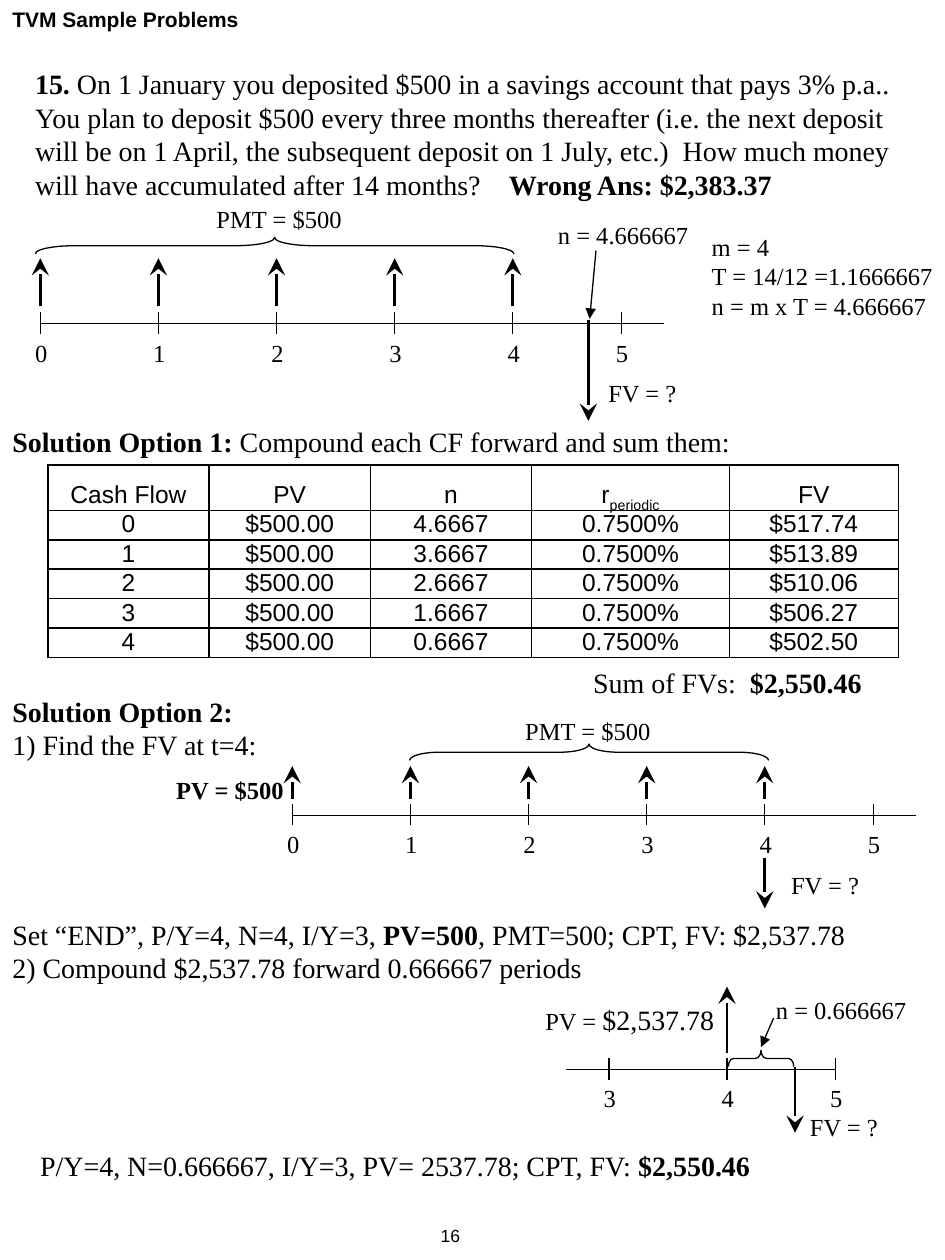
from dataclasses import dataclass

from lxml import etree
from pptx import Presentation
from pptx.dml.color import RGBColor
from pptx.enum import shapes, text
from pptx.oxml import ns
from pptx.util import Inches, Pt


@dataclass(frozen=True)
class Theme:
    ink: RGBColor = RGBColor(0, 0, 0)
    serif: str = "Times New Roman"
    sans: str = "Arial"
    body: int = 16
    label: int = 14
    title: int = 12
    page: int = 10
    thin: float = 0.75
    thick: float = 1.5
    grid: float = 1


THEME = Theme()
PERIOD = 0.9375     # distance between two ticks
LAST_PERIOD = 0.86  # the step from 4 to 5 is shorter


def add_run(paragraph, content, size=THEME.label, font=THEME.serif, bold=False, baseline=None):
    run = paragraph.add_run()
    run.text = content
    run.font.size = Pt(size)
    run.font.name = font
    run.font.bold = bold
    run.font.color.rgb = THEME.ink
    if baseline:
        run.font._element.set("baseline", str(baseline))


def add_child(parent, tag, **attributes):
    return etree.SubElement(parent, ns.qn(tag), {k: str(v) for k, v in attributes.items()})


def tick_x(origin, number):
    return origin + PERIOD * min(number, 4) + LAST_PERIOD * (number == 5)


class Page:
    def __init__(self, slide, theme):
        self.shapes = slide.shapes
        self.theme = theme

    def text(self, left, top, width, height, *lines, wrap=False, fit=True,
             align=None, tab=None, right_inset=0.1, **style):
        """Each line is a string or a list of (string, format) pairs."""
        box = self.shapes.add_textbox(*map(Inches, (left, top, width, height)))
        frame = box.text_frame
        frame.word_wrap = wrap
        frame.margin_right = Inches(right_inset)
        if fit:
            frame.auto_size = text.MSO_AUTO_SIZE.SHAPE_TO_FIT_TEXT
        for index, line in enumerate(lines):
            paragraph = frame.add_paragraph() if index else frame.paragraphs[0]
            paragraph.alignment = align
            if tab:
                stops = add_child(paragraph._p.get_or_add_pPr(), "a:tabLst")
                add_child(stops, "a:tab", pos=Inches(tab), algn="l")
            for content, extra in [(line, {})] if isinstance(line, str) else line:
                add_run(paragraph, content, **{**style, **extra})

    def line(self, x1, y1, x2, y2, weight=THEME.thin, head=None, head_size="med"):
        connector = self.shapes.add_connector(
            shapes.MSO_CONNECTOR.STRAIGHT, *map(Inches, (x1, y1, x2, y2)))
        connector.line.color.rgb = self.theme.ink
        connector.line.width = Pt(weight)
        properties = connector._element.spPr
        if head:
            add_child(properties.find(ns.qn("a:ln")), "a:tailEnd",
                      type=head, w=head_size, len=head_size)
        add_child(properties, "a:effectLst")

    def cash_flow(self, x, start, end):
        self.line(x, start, x, end, self.theme.thick, "stealth", "lg")

    def brace(self, x1, x2, middle, curl):
        depth, span = 0.13, x2 - x1
        brace = self.shapes.add_shape(
            shapes.MSO_SHAPE.RIGHT_BRACE,
            *map(Inches, ((x1 + x2 - depth) / 2, middle - span / 2, depth, span)))
        brace.rotation = 270
        brace.adjustments[0] = curl
        brace.adjustments[1] = 0.5
        brace.shadow.inherit = False
        brace.fill.background()
        brace.line.color.rgb = self.theme.ink
        brace.line.width = Pt(self.theme.thin)

    def timeline(self, origin, axis, start, end, numbers):
        self.line(start, axis, end, axis)
        for number in numbers:
            x = tick_x(origin, number)
            self.line(x, axis - 0.09, x, axis + 0.08)
            self.text(x - 0.14, axis + 0.06, 0.3, 0.33, str(number))

    def table(self, left, top, widths, heights, rows):
        table = self.shapes.add_table(
            len(heights), len(widths),
            *map(Inches, (left, top, sum(widths), sum(heights)))).table
        table.first_row = table.horz_banding = False
        for column, width in zip(table.columns, widths):
            column.width = Inches(width)
        for row, height in zip(table.rows, heights):
            row.height = Inches(height)
        for r in range(len(heights)):
            for c in range(len(widths)):
                filled = r < len(rows)
                self.cell(table.cell(r, c), rows[r][c] if filled else "",
                          "LRTB" if filled else "T")

    def cell(self, cell, content, edges):
        cell.vertical_anchor = text.MSO_ANCHOR.BOTTOM
        for edge in "LRTB":
            border = add_child(cell._tc.get_or_add_tcPr(), f"a:ln{edge}", w=Pt(self.theme.grid))
            if edge in edges:
                color = add_child(border, "a:solidFill")
                add_child(color, "a:srgbClr", val=self.theme.ink)
            else:
                add_child(border, "a:noFill")
        cell.fill.background()
        if content:
            paragraph = cell.text_frame.paragraphs[0]
            paragraph.alignment = text.PP_ALIGN.CENTER
            paragraph.line_spacing = 0.1
            main, _, subscript = content.partition("_")
            add_run(paragraph, main, font=self.theme.sans)
            if subscript:
                add_run(paragraph, subscript, font=self.theme.sans, baseline=-30000)


def main():
    deck = Presentation()
    deck.slide_width, deck.slide_height = Inches(7.5), Inches(10)
    page = Page(deck.slides.add_slide(deck.slide_layouts[6]), THEME)
    bold, plain, body = {"bold": True}, {}, {"size": THEME.body}

    # Header and page number
    page.text(0, 0, 3.25, 0.25, "TVM Sample Problems", wrap=True, fit=False,
              size=THEME.title, font=THEME.sans, bold=True)
    page.text(3.25, 9.67, 0.5, 0.33, "16", wrap=True, fit=False,
              align=text.PP_ALIGN.RIGHT, size=THEME.page, font=THEME.sans)

    # Problem
    page.text(0.18, 0.48, 7.32, 1.17, [
        ("15.", bold),
        (" On 1 January you deposited $500 in a savings account that pays 3% p.a..  "
         "You plan to deposit $500 every three months thereafter (i.e. the next deposit "
         "will be on 1 April, the subsequent deposit on 1 July, etc.)  How much money "
         "will have accumulated after 14 months?\t", plain),
        ("Wrong Ans: $2,383.37", bold)], wrap=True, tab=3.76, **body)

    # Timeline of the problem
    problem = 0.32
    page.timeline(problem, 2.57, problem, 5.27, range(6))
    for number in range(5):
        page.cash_flow(tick_x(problem, number), 2.43, 2.05)
    page.brace(0.28, 4.08, 1.95, 2.4)
    page.text(1.62, 1.57, 1.2, 0.33, "PMT = $500")
    page.cash_flow(4.67, 2.54, 3.34)
    page.text(4.73, 2.95, 0.74, 0.33, "FV = ?")
    page.text(4.33, 1.7, 1.23, 0.33, "n = 4.666667", right_inset=0.04)
    page.line(4.73, 1.99, 4.68, 2.53, head="triangle")
    page.text(5.55, 1.79, 1.95, 0.8,
              "m = 4", "T = 14/12 =1.1666667", "n = m x T = 4.666667", right_inset=0.04)

    # Option 1: table of compounded cash flows
    page.text(0, 3.32, 5.92, 0.37, [
        ("Solution Option 1:", bold),
        (" Compound each CF forward and sum them:", plain)], **body)
    future_values = ["$517.74", "$513.89", "$510.06", "$506.27", "$502.50"]
    flows = [[str(i), "$500.00", f"{4.6667 - i:.4f}", "0.7500%", value]
             for i, value in enumerate(future_values)]
    header, footer = 0.36, 0.56
    flow_height = (2.09 - header - footer) / len(flows)
    page.table(0.38, 3.69, [1.28, 1.28, 1.28, 1.57, 1.34],
               [header] + [flow_height] * len(flows) + [footer],
               [["Cash Flow", "PV", "n", "r_periodic", "FV"]] + flows)
    page.text(4.61, 5.23, 2.34, 0.37,
              [("Sum of FVs:  ", plain), ("$2,550.46", bold)], **body)

    # Option 2, step 1: value at t=4
    page.text(0, 5.46, 2.21, 0.64,
              [("Solution Option 2:", bold)], "1) Find the FV at t=4:", **body)
    step_one = 2.32
    page.timeline(step_one, 6.47, step_one, 7.27, range(6))
    for number in range(5):
        page.cash_flow(tick_x(step_one, number), 6.34, 6.08)
    page.brace(3.25, 6.1, 5.97, 1.8)
    page.text(4.07, 5.63, 1.2, 0.33, "PMT = $500")
    page.text(1.3, 6.1, 1.06, 0.33, "PV = $500", bold=True)
    page.cash_flow(tick_x(step_one, 4), 6.81, 7.21)
    page.text(6.18, 6.86, 0.74, 0.33, "FV = ?")
    page.text(0, 7.23, 6.86, 0.64, [
        ("Set “END”, P/Y=4, N=4, I/Y=3, ", plain), ("PV=500", bold),
        (", PMT=500; CPT, FV: $2,537.78", plain)],
        "2) Compound $2,537.78 forward 0.666667 periods", **body)

    # Option 2, step 2: forward from t=4
    step_two = 2.02
    page.timeline(step_two, 8.49, 4.49, 6.63, range(3, 6))
    page.cash_flow(tick_x(step_two, 4), 8.36, 7.83)
    page.text(4.23, 7.91, 1.55, 0.37, [("PV = ", plain), ("$2,537.78", body)])
    page.brace(5.78, 6.3, 8.4, 0.33)
    page.text(6.06, 7.85, 1.23, 0.33, "n = 0.666667", right_inset=0.04)
    page.line(6.14, 8.08, 6.04, 8.31, head="triangle")
    page.cash_flow(6.31, 8.47, 8.99)
    page.text(6.33, 8.78, 0.74, 0.33, "FV = ?")
    page.text(0.22, 9.07, 5.88, 0.37, [
        ("P/Y=4, N=0.666667, I/Y=3, PV= 2537.78; CPT, FV: ", plain),
        ("$2,550.46", bold)], **body)

    deck.save("out.pptx")


if __name__ == "__main__":
    main()
